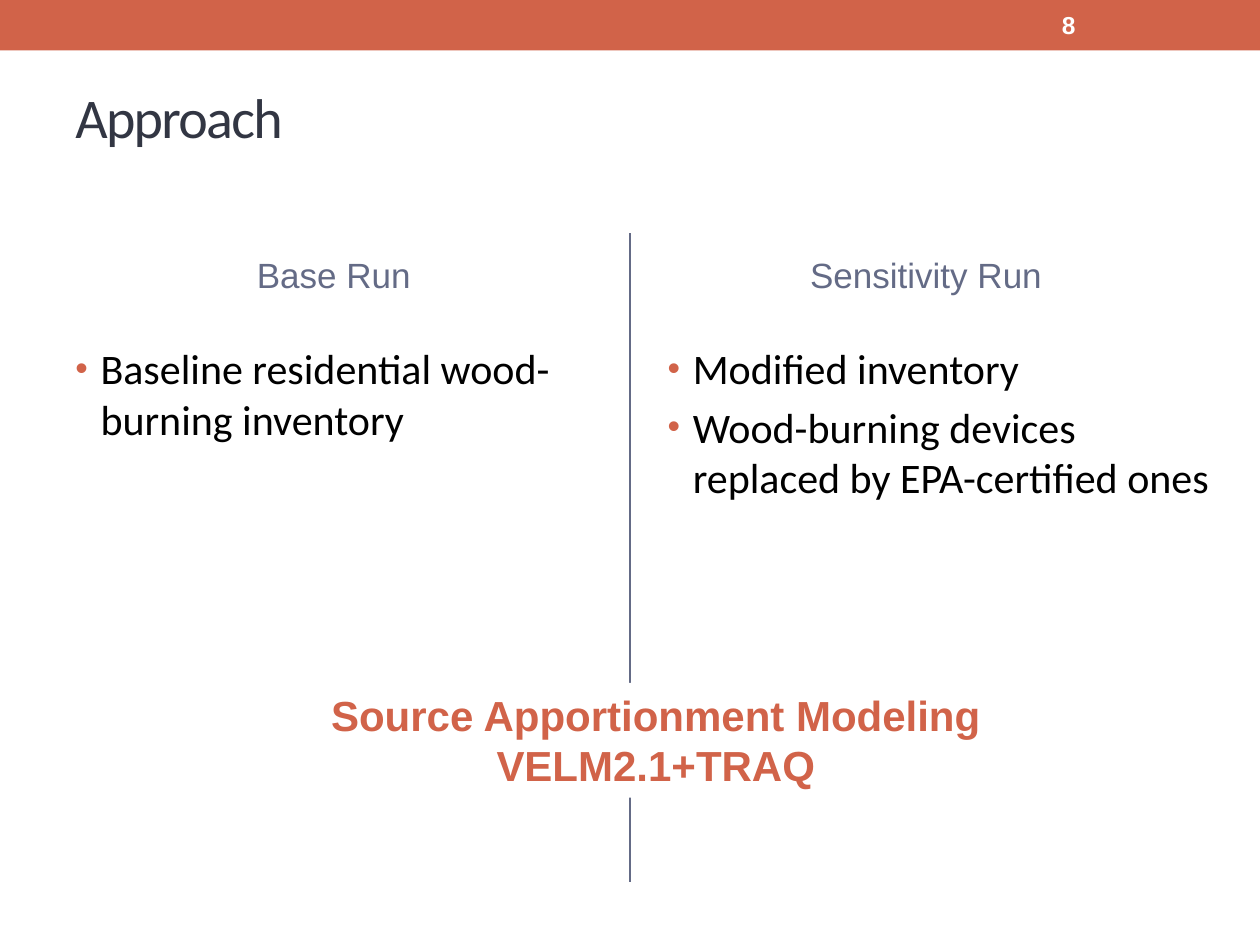
from lxml import etree
from pptx import Presentation
from pptx.dml.color import RGBColor
from pptx.enum.shapes import MSO_CONNECTOR, MSO_SHAPE
from pptx.enum.text import MSO_ANCHOR as ANCHOR, PP_ALIGN as ALIGN
from pptx.oxml.ns import qn
from pptx.util import Inches, Pt

ORANGE = RGBColor(0xD1, 0x63, 0x49)
SLATE = RGBColor(0x64, 0x6B, 0x86)
NAVY = RGBColor(0x32, 0x36, 0x43)
BLACK = RGBColor(0, 0, 0)
WHITE = RGBColor(0xFF, 0xFF, 0xFF)


def add_rect(slide, box, color):
    s = slide.shapes.add_shape(MSO_SHAPE.RECTANGLE, *map(Inches, box))
    s.shadow.inherit = False
    s.fill.solid()
    s.fill.fore_color.rgb = color
    s.line.fill.background()
    return s


def add_divider(slide, x, top, bottom):
    line = slide.shapes.add_connector(
        MSO_CONNECTOR.STRAIGHT, Inches(x), Inches(top), Inches(x), Inches(bottom))
    line.line.color.rgb = SLATE
    line.line.width = Pt(1.5)
    etree.SubElement(line._element.spPr, qn("a:effectLst"))


def set_bullet(p):
    pPr = p._p.get_or_add_pPr()
    pPr.set("marL", str(Inches(0.2)))
    pPr.set("indent", str(Inches(-0.2)))
    color = etree.SubElement(pPr, qn("a:buClr"))
    etree.SubElement(color, qn("a:srgbClr"), val=str(ORANGE))
    etree.SubElement(pPr, qn("a:buSzPct"), val="85000")
    etree.SubElement(pPr, qn("a:buFont"), typeface="Arial")
    etree.SubElement(pPr, qn("a:buChar"), char="•")


def write(s, lines, size, font, color, bold=False, align=ALIGN.LEFT,
          anchor=ANCHOR.MIDDLE, before=0, bullets=False, spacing=None):
    tf = s.text_frame
    tf.word_wrap = True
    tf.vertical_anchor = anchor
    for i, text in enumerate(lines):
        p = tf.paragraphs[0] if i == 0 else tf.add_paragraph()
        p.alignment = align
        p.space_before = Pt(before)
        if bullets:
            set_bullet(p)
        r = p.add_run()
        r.text = text
        r.font.size = Pt(size)
        r.font.name = font
        r.font.bold = bold
        r.font.color.rgb = color
        if spacing is not None:
            r._r.get_or_add_rPr().set("spc", str(spacing))


def add_text(slide, box, lines, *style, **options):
    s = slide.shapes.add_textbox(*map(Inches, box))
    write(s, lines, *style, **options)


def add_column(slide, left, body_width, heading, items):
    add_text(slide, (left, 1.83, 4.3, 0.7), [heading], 20, "Arial", SLATE,
             align=ALIGN.CENTER, before=4)
    add_text(slide, (left, 2.67, body_width, 4.32), items, 24, "Calibri", BLACK,
             anchor=ANCHOR.TOP, before=4.8, bullets=True)


def main():
    prs = Presentation()
    prs.slide_width, prs.slide_height = Inches(10), Inches(7.5)
    slide = prs.slides.add_slide(prs.slide_layouts[6])

    # Top band and column divider
    add_rect(slide, (0, 0, 10, 0.4), ORANGE)
    add_divider(slide, 5, 1.85, 7)

    # Title
    add_text(slide, (0.5, 0.57, 9, 0.7), ["Approach"], 32, "Calibri", NAVY,
             spacing=-100)

    # Two runs compared
    add_column(slide, 0.5, 4.3, "Base Run",
               ["Baseline residential wood-burning inventory"])
    add_column(slide, 5.2, 4.51, "Sensitivity Run",
               ["Modified inventory",
                "Wood-burning devices replaced by EPA-certified ones"])

    # Shared model, across the divider
    model = add_rect(slide, (1.37, 5.42, 7.67, 0.91), WHITE)
    write(model, ["Source Apportionment Modeling", "VELM2.1+TRAQ"],
          24, "Arial", ORANGE, bold=True, align=ALIGN.CENTER, anchor=ANCHOR.TOP)

    # Slide number
    add_text(slide, (8.33, 0.02, 1.17, 0.36), ["8"], 14, "Arial", WHITE, bold=True)

    prs.save("out.pptx")


if __name__ == "__main__":
    main()
